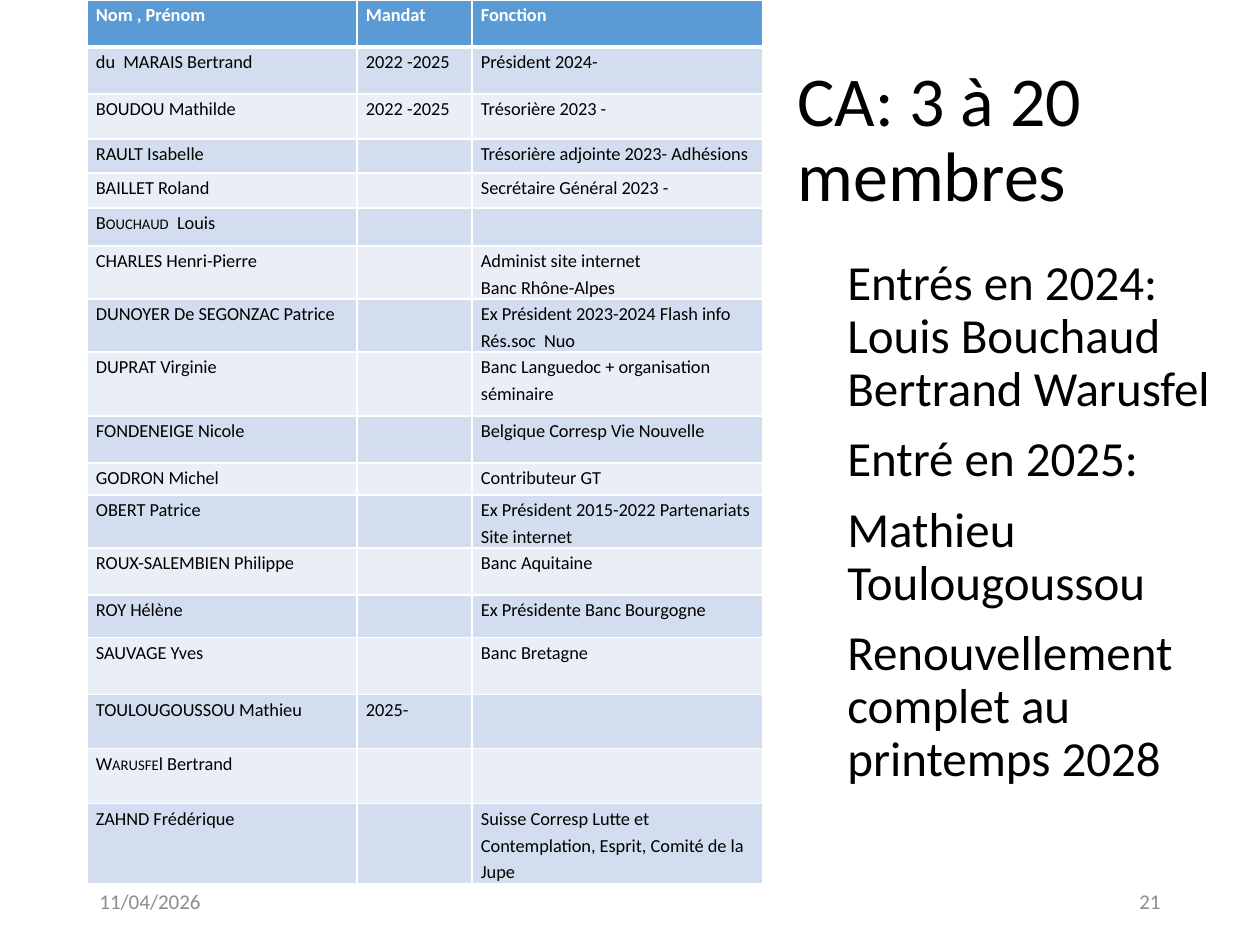
from lxml import etree
from pptx import Presentation
from pptx.dml.color import RGBColor
from pptx.enum.text import MSO_ANCHOR, PP_ALIGN
from pptx.oxml.ns import qn
from pptx.util import Pt

PX = 914400 / 126
FONT = "Calibri"
WHITE = RGBColor(0xFF, 0xFF, 0xFF)
BLACK = RGBColor(0x00, 0x00, 0x00)
GREY = RGBColor(0x8C, 0x8C, 0x8C)
HEADER = RGBColor(0x5B, 0x9B, 0xD5)
BAND_DARK = RGBColor(0xD2, 0xDE, 0xEF)
BAND_LIGHT = RGBColor(0xEA, 0xEF, 0xF7)
TOP, MIDDLE = MSO_ANCHOR.TOP, MSO_ANCHOR.MIDDLE
LEFT, RIGHT = PP_ALIGN.LEFT, PP_ALIGN.RIGHT

COLUMNS = [270, 115, 291]
MEMBERS = [
    (47, "Nom\u00a0, Prénom", "Mandat", "Fonction"),
    (47, "du  MARAIS Bertrand", "2022 -2025", "Président 2024-"),
    (45, "BOUDOU Mathilde", "2022 -2025", "Trésorière 2023 -"),
    (34, "RAULT Isabelle", "", "Trésorière adjointe 2023- Adhésions"),
    (35, "BAILLET Roland", "", "Secrétaire Général 2023 -"),
    (38, "Bouchaud|  Louis", "", ""),
    (53, "CHARLES Henri-Pierre", "", "Administ site internet \nBanc Rhône-Alpes"),
    (53, "DUNOYER De SEGONZAC Patrice", "", "Ex Président 2023-2024 Flash info Rés.soc  Nuo"),
    (64, "DUPRAT Virginie", "", "Banc Languedoc + organisation séminaire"),
    (47, "FONDENEIGE Nicole", "", "Belgique Corresp Vie Nouvelle"),
    (32, "GODRON Michel", "", "Contributeur GT"),
    (53, "OBERT Patrice", "", "Ex Président 2015-2022 Partenariats Site internet"),
    (47, "ROUX-SALEMBIEN Philippe", "", "Banc Aquitaine"),
    (43, "ROY Hélène", "", "Ex Présidente Banc Bourgogne"),
    (57, "SAUVAGE Yves", "", "Banc Bretagne"),
    (54, "TOULOUGOUSSOU Mathieu", "2025-", ""),
    (55, "Warusfe|l Bertrand", "", ""),
    (80, "ZAHND Frédérique", "", "Suisse Corresp Lutte et Contemplation, Esprit, Comité de la Jupe"),
]
NEWS = [
    "Entrés en 2024:  Louis Bouchaud\nBertrand Warusfel",
    "Entré en 2025:",
    "Mathieu Toulougoussou",
    "Renouvellement complet au printemps 2028",
]


def px(n):
    """Turn pixels into EMU."""
    return round(n * PX)


def style_runs(p, size, color, bold=False):
    """Format every run of a paragraph."""
    for r in p.runs:
        r.font.name = FONT
        r.font.size = Pt(size)
        r.font.bold = bold
        r.font.color.rgb = color


def add_text(s, box, lines, size, color, anchor=TOP, align=LEFT, spacing=1.0):
    """Place a wrapped text box with one paragraph for each line."""
    tf = s.shapes.add_textbox(*map(px, box)).text_frame
    tf.word_wrap = True
    tf.vertical_anchor = anchor
    for i, line in enumerate(lines):
        p = tf.add_paragraph() if i else tf.paragraphs[0]
        p.text = line
        p.alignment = align
        p.line_spacing = spacing
        p.space_before = Pt(10 if i else 0)
        style_runs(p, size, color)


def set_borders(cell, top, bottom):
    """Draw white borders around a cell, widths in points."""
    tc_pr = cell._tc.get_or_add_tcPr()
    sides = (("a:lnL", 1), ("a:lnR", 1), ("a:lnT", top), ("a:lnB", bottom))
    for i, (tag, width) in enumerate(sides):
        ln = etree.Element(qn(tag), w=str(Pt(width)))
        fill = etree.SubElement(ln, qn("a:solidFill"))
        etree.SubElement(fill, qn("a:srgbClr"), val=str(WHITE))
        tc_pr.insert(i, ln)


def fill_cell(cell, text, row):
    """Write and style one cell; text before a bar is in small capitals."""
    header = row == 0
    cell.fill.solid()
    cell.fill.fore_color.rgb = HEADER if header else BAND_DARK if row % 2 else BAND_LIGHT
    cell.margin_left = cell.margin_right = px(9)
    cell.margin_top = cell.margin_bottom = 0
    set_borders(cell, 3 if row == 1 else 1, 3 if header else 1)
    small, _, rest = text.rpartition("|")
    p = cell.text_frame.paragraphs[0]
    p.text = small or rest
    if small:
        p.runs[0].font._element.set("cap", "small")
        p.add_run().text = rest
    p.line_spacing = 1.2
    p.space_after = Pt(10)
    style_runs(p, 10.5, WHITE if header else BLACK, header)
    if not text:
        etree.SubElement(p._p, qn("a:endParaRPr"), sz="1050")


def add_members(s, left, top):
    """Build the table of board members."""
    height = sum(row[0] for row in MEMBERS)
    box = map(px, (left, top, sum(COLUMNS), height))
    table = s.shapes.add_table(len(MEMBERS), len(COLUMNS), *box).table
    for column, width in zip(table.columns, COLUMNS):
        column.width = px(width)
    for i, (row_height, *texts) in enumerate(MEMBERS):
        table.rows[i].height = px(row_height)
        for j, text in enumerate(texts):
            fill_cell(table.cell(i, j), text, i)


def add_footer(s, left, top, width):
    """Place the date on the left and the slide number on the right."""
    w, h = 284, 50
    add_text(s, (left, top, w, h), ["11/04/2026"], 12, GREY, MIDDLE)
    add_text(s, (left + width - w, top, w, h), ["21"], 12, GREY, MIDDLE, RIGHT)


def main():
    """Build and save the slide."""
    prs = Presentation()
    prs.slide_width, prs.slide_height = px(1260), px(945)
    s = prs.slides.add_slide(prs.slide_layouts[6])
    add_text(s, (785, 50, 388, 183), ["CA: 3 à 20 membres"], 40, BLACK, MIDDLE, spacing=0.9)
    add_members(s, 87, 0)
    add_text(s, (835, 252, 389, 600), NEWS, 28, BLACK, spacing=0.9)
    add_footer(s, 87, 876, 1086)
    prs.save("out.pptx")


if __name__ == "__main__":
    main()
